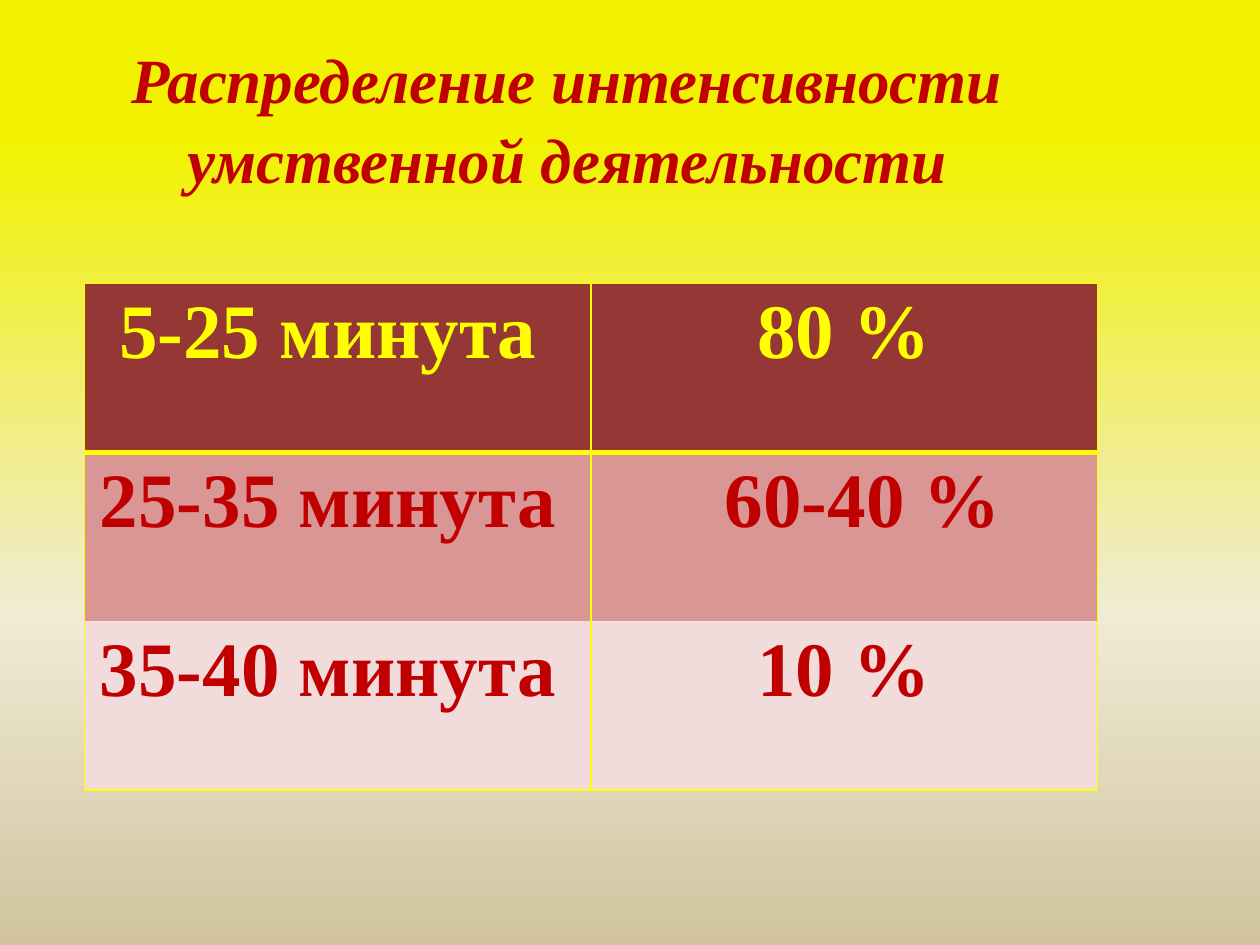
from lxml.etree import SubElement
from pptx import Presentation
from pptx.dml.color import RGBColor
from pptx.enum.text import MSO_ANCHOR, PP_ALIGN
from pptx.oxml.ns import qn
from pptx.util import Inches, Pt

FONT = "Times New Roman"
RED = RGBColor(0xC0, 0x00, 0x00)
YELLOW = RGBColor(0xFF, 0xFF, 0x00)
BROWN = RGBColor(0x95, 0x37, 0x35)
ROSE = RGBColor(0xD9, 0x96, 0x94)
PALE_ROSE = RGBColor(0xF2, 0xDC, 0xDB)
BACKGROUND_STOPS = [
    (15, RGBColor(0xF2, 0xF2, 0x00)),
    (65, RGBColor(0xF0, 0xEB, 0xD5)),
    (100, RGBColor(0xD1, 0xC3, 0x9F)),
]
# minutes, share, row fill, text colour, extra left margin of the share
ROWS = [
    ("5-25 минута ", "80 %", BROWN, YELLOW, 0),
    ("25-35 минута ", "60-40 %", ROSE, RED, 0.3),
    ("35-40 минута ", "10 %", PALE_ROSE, RED, 0),
]
CELL_WIDTH, CELL_HEIGHT = 4.02, 1.34


def add_color(parent, color):
    SubElement(parent, qn("a:srgbClr"), val=str(color))


def set_background(slide):
    fill = slide.background.fill
    fill.gradient()
    fill.gradient_angle = 270
    stops = slide.element.find(".//" + qn("a:gsLst"))
    for stop in list(stops):
        stops.remove(stop)
    for percent, color in BACKGROUND_STOPS:
        add_color(SubElement(stops, qn("a:gs"), pos=str(percent * 1000)), color)


def write_centered(text_frame, text, size, color, italic=False):
    paragraph = text_frame.paragraphs[0]
    paragraph.alignment = PP_ALIGN.CENTER
    run = paragraph.add_run()
    run.text = text
    run.font.name = FONT
    run.font.size = Pt(size)
    run.font.bold = True
    run.font.italic = italic
    run.font.color.rgb = color
    return paragraph


def add_title(slide, text):
    box = slide.shapes.add_textbox(Inches(0), Inches(0.3), Inches(9), Inches(1.25))
    frame = box.text_frame
    frame.word_wrap = True
    frame.vertical_anchor = MSO_ANCHOR.MIDDLE
    write_centered(frame, text, 36, RED, italic=True).line_spacing = 1.05


def set_borders(cell, widths):
    """Draw yellow borders; widths maps L, R, T and B to points, 0 for none."""
    properties = cell._tc.get_or_add_tcPr()
    for side in "LRTB":
        width = widths[side]
        line = SubElement(properties, qn(f"a:ln{side}"), w=str(Pt(width)))
        if width:
            add_color(SubElement(line, qn("a:solidFill")), YELLOW)
        else:
            SubElement(line, qn("a:noFill"))


def add_intensity_table(slide):
    frame = slide.shapes.add_table(
        len(ROWS), 2, Inches(0.67), Inches(2.25),
        Inches(2 * CELL_WIDTH), Inches(len(ROWS) * CELL_HEIGHT))
    table = frame.table
    for column in table.columns:
        column.width = Inches(CELL_WIDTH)
    horizontal_lines = [1, 3, 0, 1]
    for index, (minutes, share, fill, color, indent) in enumerate(ROWS):
        table.rows[index].height = Inches(CELL_HEIGHT)
        widths = {"L": 1, "R": 1, "T": horizontal_lines[index],
                  "B": horizontal_lines[index + 1]}
        for cell, text in zip(table.rows[index].cells, (minutes, share)):
            set_borders(cell, widths)
            cell.fill.solid()
            cell.fill.fore_color.rgb = fill
            write_centered(cell.text_frame, text, 44, color)
        table.cell(index, 1).margin_left = Inches(0.1 + indent)


def main():
    presentation = Presentation()
    presentation.slide_width = Inches(10)
    presentation.slide_height = Inches(7.5)
    slide = presentation.slides.add_slide(presentation.slide_layouts[6])
    set_background(slide)
    add_title(slide, "Распределение интенсивности умственной деятельности")
    add_intensity_table(slide)
    presentation.save("out.pptx")


if __name__ == "__main__":
    main()
